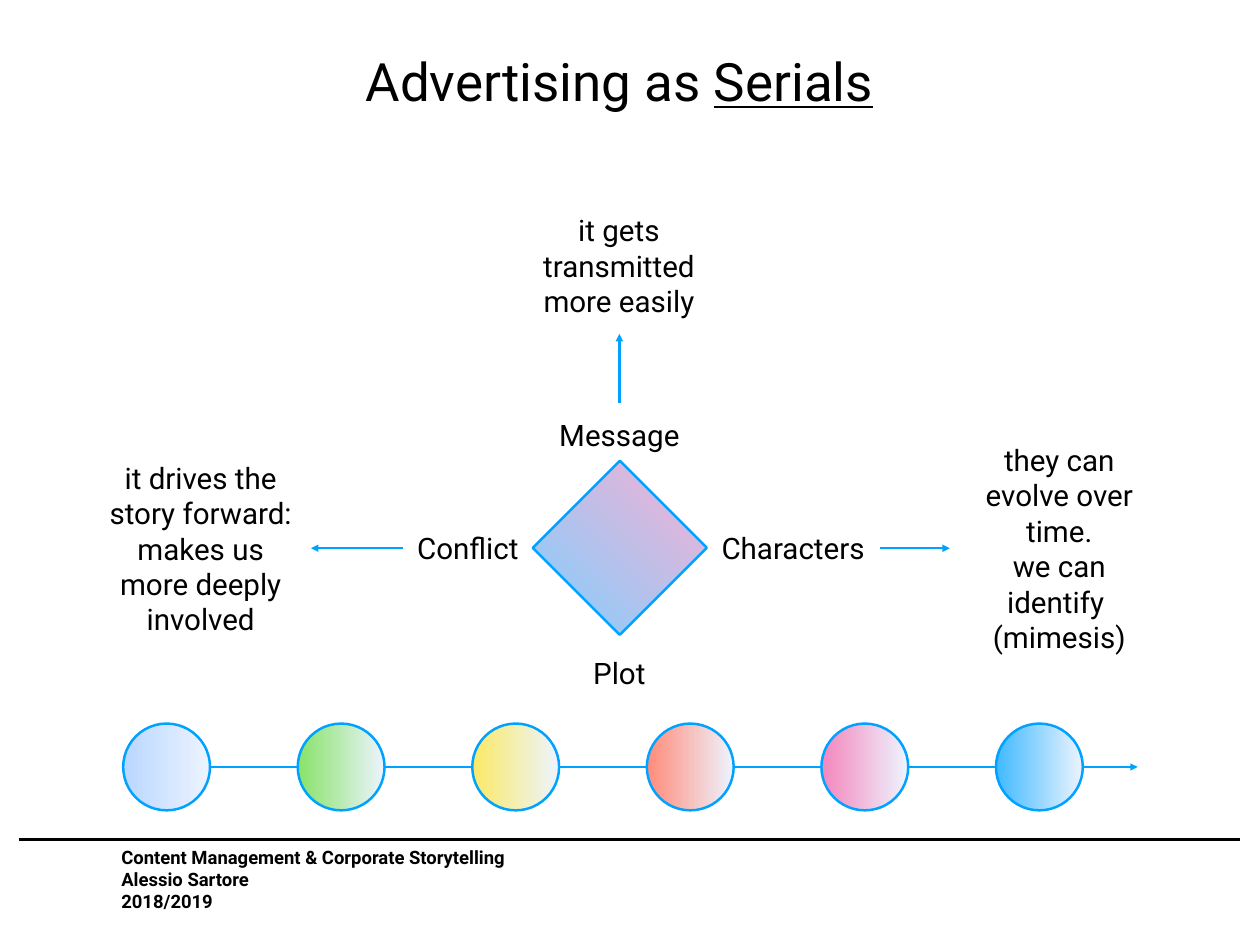
import pptx
import pptx.util
import pptx.dml.color
import pptx.enum.shapes
import pptx.enum.text
import pptx.oxml.ns
import lxml.etree

RGBColor = pptx.dml.color.RGBColor
BLACK = RGBColor(0x00, 0x00, 0x00)
BLUE = RGBColor(0x00, 0xA2, 0xFF)
DIAMOND_BLUE = RGBColor(0x80, 0xD0, 0xFF)
DIAMOND_PINK = RGBColor(0xF7, 0xAF, 0xD3)
PALE = RGBColor(0xED, 0xF4, 0xFF)
EPISODE_COLORS = [
    RGBColor(0xBA, 0xD7, 0xFF),
    RGBColor(0x88, 0xE2, 0x68),
    RGBColor(0xFB, 0xE9, 0x65),
    RGBColor(0xFF, 0x8B, 0x7A),
    RGBColor(0xF3, 0x87, 0xBD),
    RGBColor(0x40, 0xB9, 0xFF),
]

PX = 9144  # 100 px to the inch
CENTER = pptx.enum.text.PP_ALIGN.CENTER
LEFT = pptx.enum.text.PP_ALIGN.LEFT
MIDDLE = pptx.enum.text.MSO_ANCHOR.MIDDLE
BOTTOM = pptx.enum.text.MSO_ANCHOR.BOTTOM
SHAPES = pptx.enum.shapes.MSO_SHAPE

presentation = pptx.Presentation()
presentation.slide_width = 1422 * PX
presentation.slide_height = 1067 * PX
slide = presentation.slides.add_slide(presentation.slide_layouts[6])


def add_text(box, text, size=24, align=CENTER, anchor=MIDDLE, wrap=False, bold=False):
    left, top, width, height = [length * PX for length in box]
    frame = slide.shapes.add_textbox(left, top, width, height).text_frame
    frame_format = {
        "word_wrap": wrap, "vertical_anchor": anchor,
        "margin_left": 6 * PX, "margin_right": 6 * PX,
        "margin_top": 6 * PX, "margin_bottom": 6 * PX,
    }
    for name, value in frame_format.items():
        setattr(frame, name, value)
    frame.text = text
    font_format = {"name": "Roboto", "size": pptx.util.Pt(size), "bold": bold}
    for paragraph in frame.paragraphs:
        paragraph.alignment = align
        for run in paragraph.runs:
            run.font.color.rgb = BLACK
            for name, value in font_format.items():
                setattr(run.font, name, value)
    return frame


def add_line(start_x, start_y, end_x, end_y, color=BLUE, arrow=True):
    connector = slide.shapes.add_connector(
        pptx.enum.shapes.MSO_CONNECTOR.STRAIGHT,
        start_x * PX, start_y * PX, end_x * PX, end_y * PX)
    connector.line.color.rgb = color
    connector.line.width = pptx.util.Pt(2)
    if arrow:
        outline = connector.line._get_or_add_ln()
        lxml.etree.SubElement(outline, pptx.oxml.ns.qn("a:tailEnd"), type="triangle")
    properties = connector._element.spPr
    lxml.etree.SubElement(properties, pptx.oxml.ns.qn("a:effectLst"))


# Footer
add_text((131, 950, 474, 86),
         "Content Management & Corporate Storytelling\nAlessio Sartore\n2018/2019",
         size=15, align=LEFT, bold=True)
add_line(22, 948, 1400, 948, color=BLACK, arrow=False)

# Title with its last word underlined
title = add_text((127, -23, 1144, 156), "Advertising as ", size=43, anchor=BOTTOM, wrap=True)
serials = title.paragraphs[0].add_run()
serials.text = "Serials"
serials.font.color.rgb = BLACK
for name, value in {"name": "Roboto", "size": pptx.util.Pt(43), "underline": True}.items():
    setattr(serials.font, name, value)

# Labels around the diamond
labels = [
    ("Message", (623, 466, 152, 50)),
    ("Characters", (804, 593, 182, 50)),
    ("Plot", (662, 735, 74, 50)),
    ("Conflict", (462, 593, 132, 50)),
]
for text, box in labels:
    add_text(box, text)

# Explanations
explanations = [
    ("they can evolve over time.\nwe can identify \n(mimesis)", (1079, 493, 233, 252)),
    ("it drives the story forward: makes us more deeply involved", (110, 513, 233, 212)),
    ("it gets transmitted more easily", (582, 234, 233, 131)),
]
for text, box in explanations:
    add_text(box, text, wrap=True)

# Arrows to the explanations, then the plot timeline
for ends in [(993, 619, 1072, 619), (455, 619, 351, 619),
             (699, 455, 699, 377), (214, 866, 1284, 866)]:
    add_line(*ends)

# Diamond and the episodes along the timeline
figures = [(SHAPES.RECTANGLE, 630, 549, 139, 315, DIAMOND_BLUE, DIAMOND_PINK)]
for index, color in enumerate(EPISODE_COLORS):
    figures.append((SHAPES.OVAL, 139 + index * 197, 817, 98, 0, color, PALE))
for kind, left, top, side, rotation, start_color, end_color in figures:
    shape = slide.shapes.add_shape(kind, left * PX, top * PX, side * PX, side * PX)
    shape.rotation = rotation
    shape.shadow.inherit = False
    shape.fill.gradient()
    shape.fill.gradient_angle = 0
    for stop, color in zip(shape.fill.gradient_stops, (start_color, end_color)):
        stop.color.rgb = color
    shape.line.color.rgb = BLUE
    shape.line.width = pptx.util.Pt(2)

presentation.save("out.pptx")
